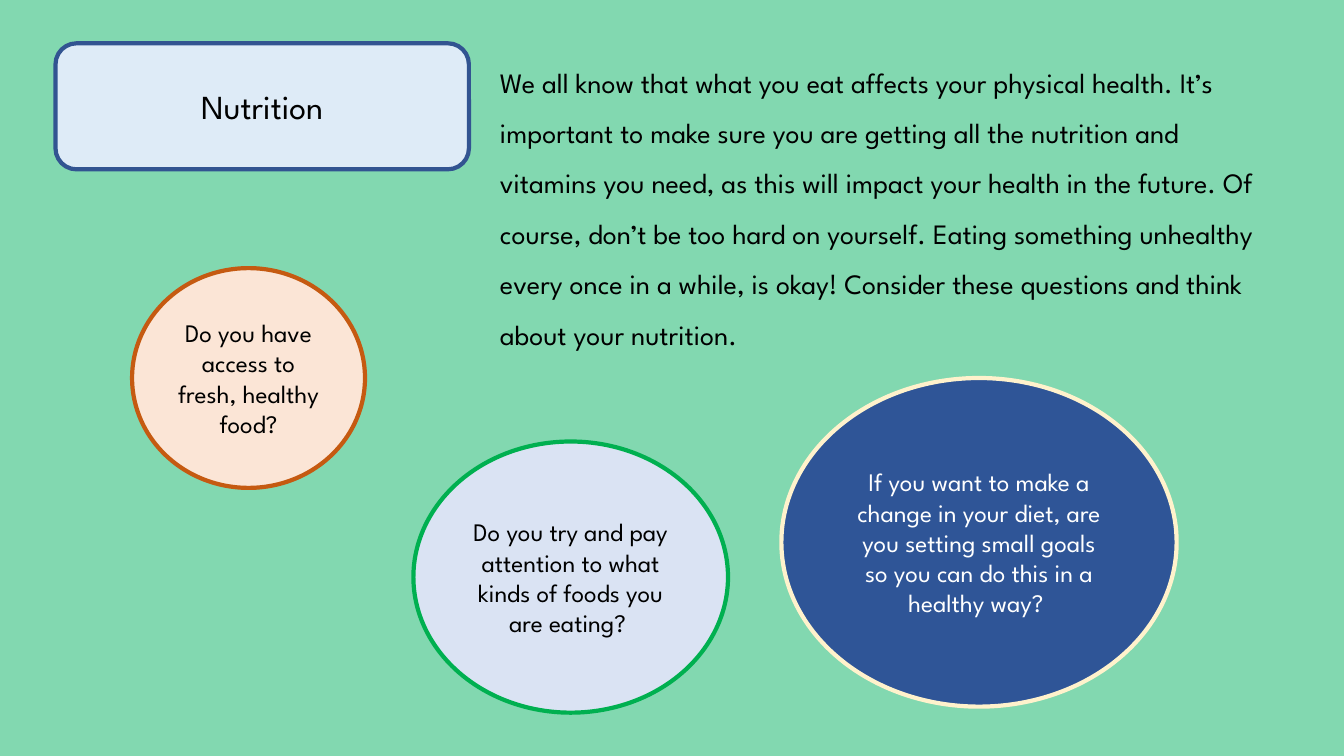
from pptx import Presentation
from pptx import util as u
from pptx.dml.color import RGBColor
from pptx.enum import shapes, text

WIDTH, HEIGHT = u.Inches(13.33), u.Inches(7.5)
FONT = "League Spartan"
COLORS = {
    "mint": "82D8B0", "black": "000000", "white": "FFFFFF",
    "sky": "DEEBF7", "navy": "325491",
    "lavender": "DAE3F3", "green": "00B050",
    "blue": "2F5597", "cream": "FFF2CC",
    "peach": "FBE5D6", "orange": "C55A11",
}

INTRO = (
    "We all know that what you eat affects your physical health. It’s important "
    "to make sure you are getting all the nutrition and vitamins you need, as this "
    "will impact your health in the future. Of course, don’t be too hard on "
    "yourself. Eating something unhealthy every once in a while, is okay! Consider "
    "these questions and think about your nutrition."
)

# Question bubbles: box in percent of the slide, fill, line, text color, wording
QUESTIONS = [
    ((30.76, 58.4, 23.41, 35.87), "lavender", "green", "black",
     "Do you try and pay attention to what kinds of foods you are eating? "),
    ((58.14, 50, 29.41, 43.47), "blue", "cream", "white",
     "If you want to make a change in your diet, are you setting small goals "
     "so you can do this in a healthy way? "),
    ((9.83, 35.47, 17.33, 29.07), "peach", "orange", "black",
     "Do you have access to fresh, healthy food?"),
]


def color(name):
    return RGBColor.from_string(COLORS[name])


def place(box):
    """Turn percentages of the slide into left, top, width, height."""
    return [int(size * share / 100)
            for size, share in zip((WIDTH, HEIGHT) * 2, box)]


def apply(target, values):
    for name, value in values.items():
        setattr(target, name, value)


def write(shape, wording, size, text_color, frame_format, paragraph_format):
    frame = shape.text_frame
    apply(frame, {"word_wrap": True, **frame_format})
    paragraph = frame.paragraphs[0]
    apply(paragraph, paragraph_format)
    run = paragraph.add_run()
    run.text = wording
    apply(run.font, {"name": FONT, "size": u.Pt(size)})
    run.font.color.rgb = color(text_color)


def add_panel(slide, kind, box, fill, line, text_color, wording, size):
    shape = slide.shapes.add_shape(kind, *place(box))
    shape.shadow.inherit = False
    shape.fill.solid()
    shape.fill.fore_color.rgb = color(fill)
    shape.line.color.rgb = color(line)
    shape.line.width = u.Pt(3)
    write(shape, wording, size, text_color,
          {"vertical_anchor": text.MSO_ANCHOR.MIDDLE},
          {"alignment": text.PP_ALIGN.CENTER})


def add_text(slide, box, wording, size):
    shape = slide.shapes.add_textbox(*place(box))
    write(shape, wording, size, "black",
          {"auto_size": text.MSO_AUTO_SIZE.SHAPE_TO_FIT_TEXT},
          {"line_spacing": 1.5})


def main():
    presentation = Presentation()
    apply(presentation, {"slide_width": WIDTH, "slide_height": HEIGHT})
    slide = presentation.slides.add_slide(presentation.slide_layouts[6])
    slide.background.fill.solid()
    slide.background.fill.fore_color.rgb = color("mint")

    # Title and introduction
    add_panel(slide, shapes.MSO_SHAPE.ROUNDED_RECTANGLE,
              (4.13, 5.73, 30.76, 16.67), "sky", "navy", "black", "Nutrition", 24)
    add_text(slide, (36.46, 5.73, 59.41, 47.6), INTRO, 20)

    # Questions
    for question in QUESTIONS:
        add_panel(slide, shapes.MSO_SHAPE.OVAL, *question, 18)

    presentation.save("out.pptx")


if __name__ == "__main__":
    main()
